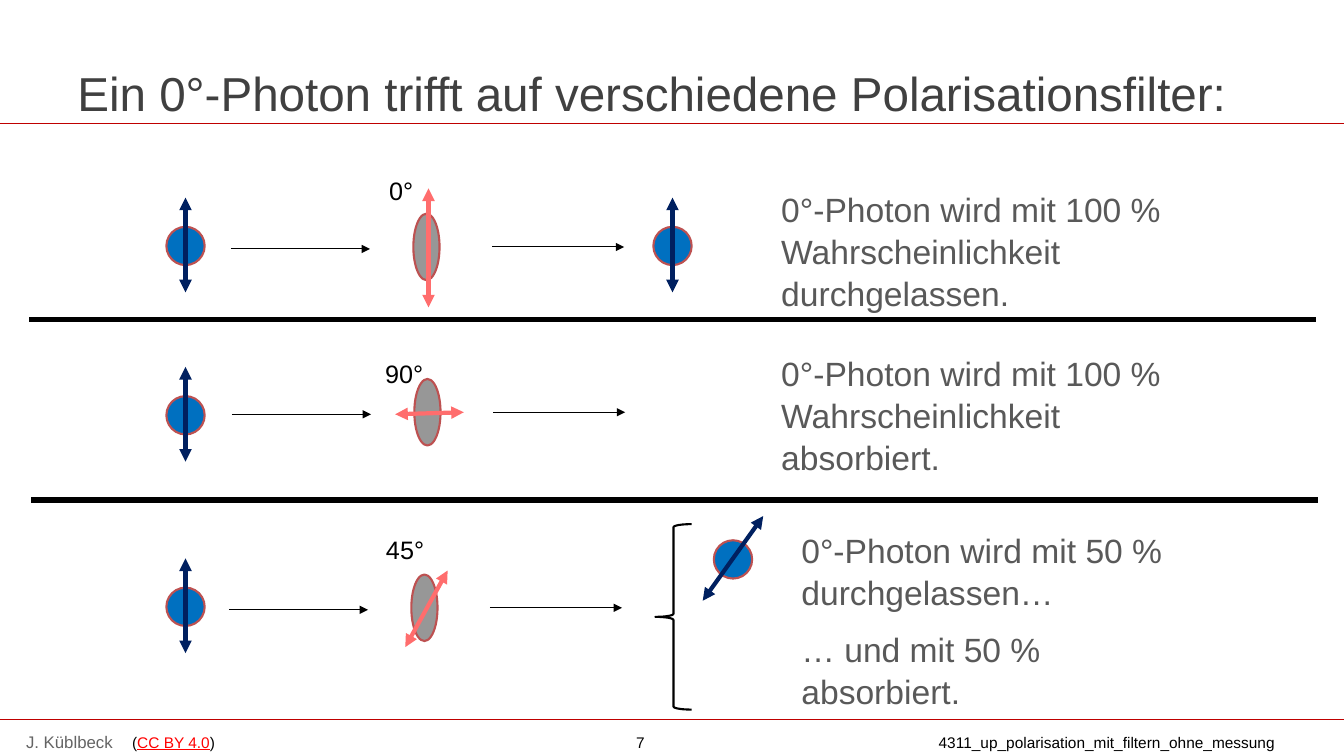
from lxml import etree
from pptx import Presentation
from pptx.dml.color import RGBColor
from pptx.enum.shapes import MSO_CONNECTOR, MSO_SHAPE
from pptx.enum.text import MSO_ANCHOR
from pptx.oxml.ns import qn
from pptx.util import Inches, Pt

# Content
W, H = 13.33, 7.5
TITLE = "Ein 0°-Photon trifft auf verschiedene Polarisationsfilter:"
AUTHOR = "J. Küblbeck"
FOOTER = [("(", "000000"), ("CC BY 4.0", "FF0000"),
          (")\t7\t4311_up_polarisation_mit_filtern_ohne_messung", "000000")]
FOOTER_TABS = (5, 8)

# Filter centre, photon centre y, half length of the filter arrow, label and its place
ROWS = [
    ((4.23, 2.45), 2.44, (0, 0.59), "0°", (3.76, 1.69)),
    ((4.24, 4.09), 4.12, (0.34, 0.01), "90°", (3.72, 3.51)),
    ((4.21, 6.03), 6.02, (0.21, 0.38), "45°", (3.73, 5.25)),
]
# Left, top, width, height, text
RESULTS = [
    (7.2, 1.81, 4.59, 1.73, "0°-Photon wird mit 100 % Wahrscheinlichkeit durchgelassen."),
    (7.2, 3.44, 4.59, 1.73, "0°-Photon wird mit 100 % Wahrscheinlichkeit absorbiert."),
    (7.4, 5.19, 4.59, 1.12, "0°-Photon wird mit 50 % durchgelassen…"),
    (7.4, 6.17, 4.18, 1.12, "… und mit 50 %\vabsorbiert."),
]
PHOTON_X = 1.84
PASSED = [(6.67, 2.44, 0, 0.47), (7.27, 5.55, 0.3, 0.42)]
UPRIGHT = (0, 0.47)
RED, BLACK, NAVY, PINK, RIM = "BF0000", "000000", "002060", "FF6D6D", "BD5151"

prs = Presentation()
prs.slide_width, prs.slide_height = Inches(W), Inches(H)
slide = prs.slides.add_slide(prs.slide_layouts[6])


def rgb(color):
    return RGBColor.from_string(color)


def box(x, y, w, h, text, size, color, wrap=True):
    tf = slide.shapes.add_textbox(*map(Inches, (x, y, w, h))).text_frame
    tf.word_wrap = wrap
    tf.text = text
    p = tf.paragraphs[0]
    p.font.size, p.font.name = Pt(size), "Arial"
    p.font.color.rgb = rgb(color)
    return tf


def line(x1, y1, x2, y2, color, width, heads=()):
    c = slide.shapes.add_connector(MSO_CONNECTOR.STRAIGHT, *map(Inches, (x1, y1, x2, y2)))
    c.line.color.rgb, c.line.width = rgb(color), Pt(width)
    for end in heads:
        etree.SubElement(c.line._get_or_add_ln(), qn(f"a:{end}"), type="triangle")
    etree.SubElement(c._element.spPr, qn("a:effectLst"))


def double_arrow(x, y, dx, dy, color):
    line(x + dx, y - dy, x - dx, y + dy, color, 3, ("headEnd", "tailEnd"))


def shape(kind, cx, cy, w, h, fill, outline):
    sp = slide.shapes.add_shape(kind, *map(Inches, (cx - w / 2, cy - h / 2, w, h)))
    sp.shadow.inherit = False
    if fill:
        sp.fill.solid()
        sp.fill.fore_color.rgb = rgb(fill)
    else:
        sp.fill.background()
    sp.line.color.rgb, sp.line.width = rgb(outline), Pt(1.5)


def photon(x, y, dx, dy):
    shape(MSO_SHAPE.OVAL, x, y, 0.38, 0.38, "0070C0", RIM)
    double_arrow(x, y - 0.01, dx, dy, NAVY)


# Footer
box(0.16, 7.21, 1.55, 0.3, AUTHOR, 12, "646464")
tf = box(1.31, 7.27, 11.81, 0.19, "", 11, BLACK)
tf.margin_left = tf.margin_right = tf.margin_top = tf.margin_bottom = 0
p = tf.paragraphs[0]
tabs = etree.SubElement(p._p.get_or_add_pPr(), qn("a:tabLst"))
p._p.pPr.insert(0, tabs)
for pos in FOOTER_TABS:
    etree.SubElement(tabs, qn("a:tab"), pos=str(Inches(pos)), algn="l")
for text, color in FOOTER:
    r = p.add_run()
    r.text = text
    r.font.size, r.font.name = Pt(11), "Arial"
    r.font.color.rgb = rgb(color)
    r.font.underline = color == "FF0000"

# Title and rules
for y in (7.14, 1.23):
    line(0, y, W, y, RED, 0.75)
tf = box(0.67, 0.6, 12, 0.63, TITLE, 34, "404040")
tf.vertical_anchor = MSO_ANCHOR.MIDDLE
for x, y in ((0.29, 3.17), (0.31, 4.96)):
    line(x, y, x + 12.76, y, BLACK, 3.75)

# Experiments: photon, path, filter, path
for (x, y), photon_y, (dx, dy), label, (label_x, label_y) in ROWS:
    shape(MSO_SHAPE.OVAL, x, y, 0.26, 0.66, "979797", RIM)
    line(x - 1.94, y + 0.02, x - 0.56, y + 0.02, BLACK, 0.75, ("tailEnd",))
    double_arrow(x + 0.02, y + 0.01, dx, dy, PINK)
    line(x + 0.65, y, x + 1.96, y, BLACK, 0.75, ("tailEnd",))
    box(label_x, label_y, 0.58, 0.4, label, 18, BLACK, wrap=False)
    photon(PHOTON_X, photon_y, *UPRIGHT)

# Outcomes
for passed in PASSED:
    photon(*passed)
shape(MSO_SHAPE.LEFT_BRACE, 6.68, 6.12, 0.36, 1.84, None, BLACK)
for x, y, w, h, text in RESULTS:
    p = box(x, y, w, h, text, 24, "595959").paragraphs[0]
    p.space_before, p.line_spacing = Pt(3), 1.04
    p._p.get_or_add_pPr().set("marL", str(Inches(0.45)))

prs.save("out.pptx")
